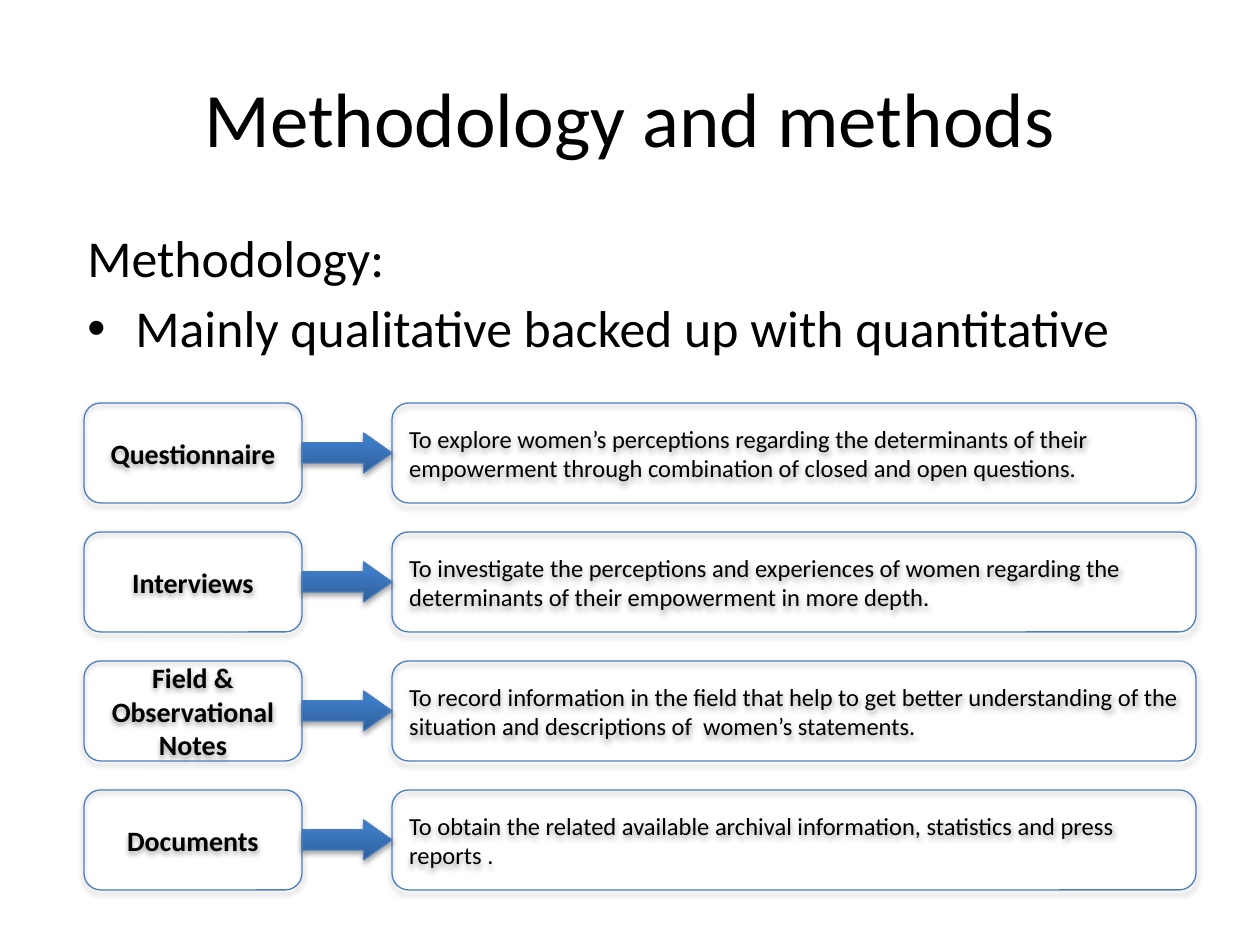
import pptx
import pptx.dml.color
import pptx.enum.shapes
import pptx.enum.text
import pptx.oxml
import pptx.oxml.ns
import pptx.util

EMU_PER_PX = 914400 / 126
FONT = "Calibri"
COLORS = {
    "text": "000000",
    "outline": "4B7EBC",
    "arrow_bottom": "2F5F99",
    "arrow_middle": "3D7CC7",
    "arrow_top": "3A7CCB",
    "shadow": "000000",
}
ARROW_STOPS = [(0, "arrow_bottom"), (80, "arrow_middle"), (100, "arrow_top")]

SHAPES = pptx.enum.shapes.MSO_SHAPE
ALIGN = pptx.enum.text.PP_ALIGN
ANCHOR = pptx.enum.text.MSO_ANCHOR

ROW_TOP, ROW_STEP, ROW_HEIGHT = 403, 129, 100
LABEL_LEFT, LABEL_WIDTH = 84, 218
PURPOSE_LEFT, PURPOSE_WIDTH = 392, 804
ARROW_HEIGHT = 40

METHODS = [
    ("Questionnaire",
     "To explore women’s perceptions regarding the determinants of their "
     "empowerment through combination of closed and open questions."),
    ("Interviews",
     "To investigate the perceptions and experiences of women regarding the "
     "determinants of their empowerment in more depth."),
    ("Field & Observational Notes",
     "To record information in the field that help to get better understanding "
     "of the situation and descriptions of  women’s statements."),
    ("Documents",
     "To obtain the related available archival information, statistics and "
     "press reports ."),
]


def px(length):
    return pptx.util.Emu(round(length * EMU_PER_PX))


def rgb(name):
    return pptx.dml.color.RGBColor.from_string(COLORS[name])


def xml(markup):
    head, tail = markup.split(">", 1)
    slash = "/" if head.endswith("/") else ""
    head = head.removesuffix("/")
    return pptx.oxml.parse_xml(f"{head} {pptx.oxml.ns.nsdecls('a')}{slash}>{tail}")


def write(frame, lines, size, bold=False, align=ALIGN.LEFT,
          anchor=ANCHOR.MIDDLE, before=0):
    frame.word_wrap = True
    frame.vertical_anchor = anchor
    frame.text = "\n".join(lines)
    for paragraph in frame.paragraphs:
        paragraph.alignment = align
        paragraph.space_before = pptx.util.Pt(before)
        paragraph.font.name = FONT
        paragraph.font.size = pptx.util.Pt(size)
        paragraph.font.bold = bold
        paragraph.font.color.rgb = rgb("text")


def add_text(slide, left, top, width, height, lines, size, **style):
    box = slide.shapes.add_textbox(px(left), px(top), px(width), px(height))
    write(box.text_frame, lines, size, **style)
    return box.text_frame


def add_bullet(paragraph, indent):
    properties = paragraph._p.get_or_add_pPr()
    properties.set("marL", str(px(indent)))
    properties.set("indent", str(-px(indent)))
    properties.append(xml('<a:buFont typeface="Arial"/>'))
    properties.append(xml('<a:buChar char="•"/>'))


def add_outlined(row, kind, left, top, width, height):
    shape = row.shapes.add_shape(kind, px(left), px(top), px(width), px(height))
    shape.fill.background()
    shape.line.color.rgb = rgb("outline")
    shape.line.width = pptx.util.Pt(0.75)
    shape.shadow.inherit = False
    effects = shape._element.spPr.find(pptx.oxml.ns.qn("a:effectLst"))
    effects.append(xml(
        '<a:outerShdw blurRad="40000" dist="23000" dir="5400000" rotWithShape="0">'
        f'<a:srgbClr val="{COLORS["shadow"]}"><a:alpha val="35000"/></a:srgbClr>'
        '</a:outerShdw>'))
    return shape


def add_card(row, left, top, width, text, size, **style):
    card = add_outlined(row, SHAPES.ROUNDED_RECTANGLE, left, top, width, ROW_HEIGHT)
    write(card.text_frame, [text], size, **style)


def add_arrow(row, top):
    left = LABEL_LEFT + LABEL_WIDTH
    arrow = add_outlined(row, SHAPES.RIGHT_ARROW, left,
                         top + (ROW_HEIGHT - ARROW_HEIGHT) // 2,
                         PURPOSE_LEFT - left, ARROW_HEIGHT)
    arrow.adjustments[1] = 0.71
    arrow.fill.gradient()
    arrow.fill.gradient_angle = 90
    stops = arrow._element.spPr.find(".//" + pptx.oxml.ns.qn("a:gsLst"))
    stops[:] = [
        xml(f'<a:gs pos="{percent * 1000}"><a:srgbClr val="{COLORS[name]}"/></a:gs>')
        for percent, name in ARROW_STOPS
    ]


def add_method(slide, top, method, purpose):
    row = slide.shapes.add_group_shape()
    add_card(row, LABEL_LEFT, top, LABEL_WIDTH, method, 16,
             bold=True, align=ALIGN.CENTER)
    add_card(row, PURPOSE_LEFT, top, PURPOSE_WIDTH, purpose, 14)
    add_arrow(row, top)


def main():
    deck = pptx.Presentation()
    deck.slide_width, deck.slide_height = px(1260), px(945)
    slide = deck.slides.add_slide(deck.slide_layouts[6])

    add_text(slide, 63, 38, 1134, 158, ["Methodology and methods"], 44,
             align=ALIGN.CENTER)
    approach = add_text(
        slide, 75, 220, 1134, 203,
        ["Methodology:", "Mainly qualitative backed up with quantitative"],
        29.6, anchor=ANCHOR.TOP, before=4.5)
    add_bullet(approach.paragraphs[1], 48)

    for index, (method, purpose) in enumerate(METHODS):
        add_method(slide, ROW_TOP + index * ROW_STEP, method, purpose)

    deck.save("out.pptx")


if __name__ == "__main__":
    main()
